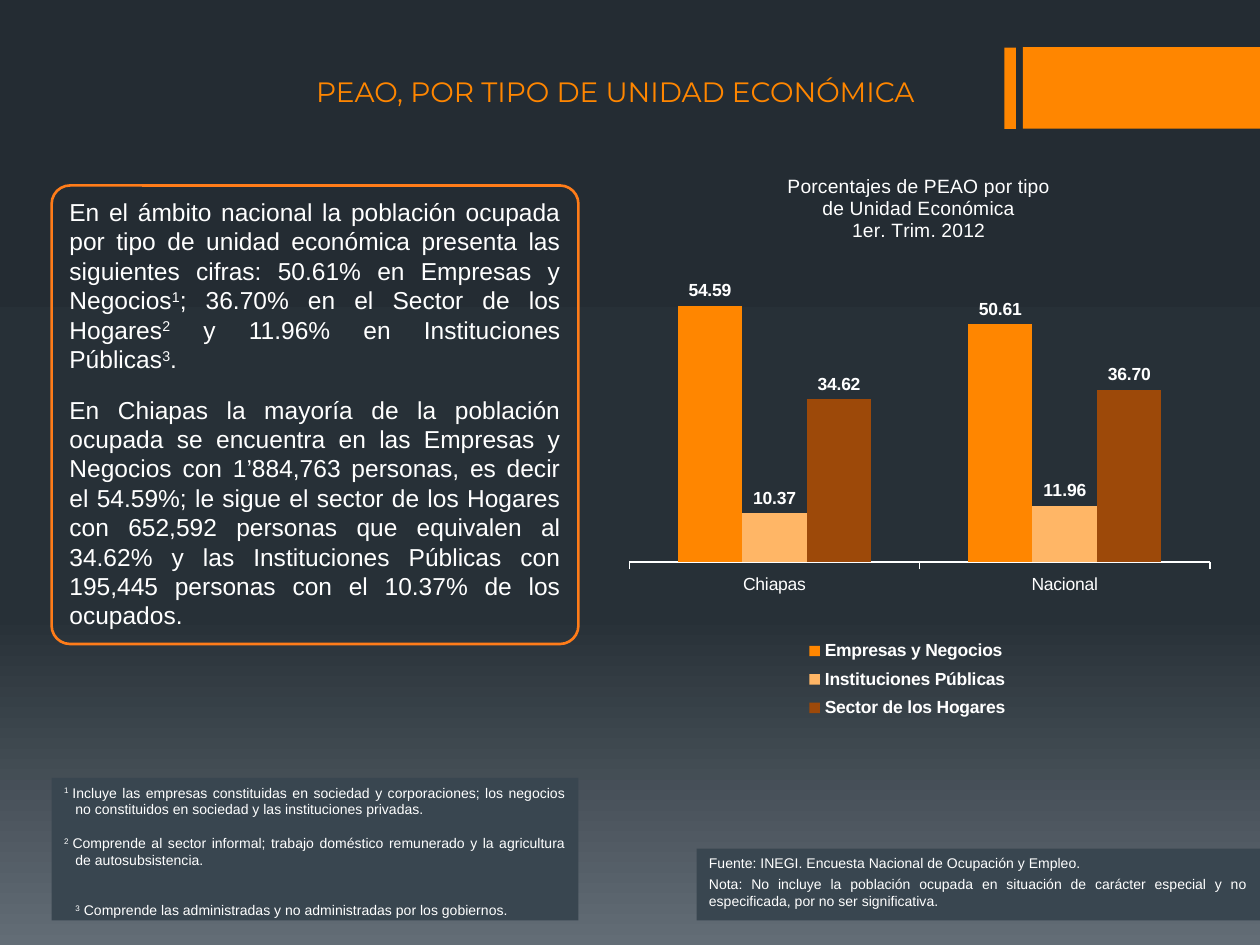
from copy import deepcopy
from dataclasses import dataclass

from lxml import etree
from pptx import Presentation
from pptx import util as u
from pptx.chart import data as chart_data
from pptx.dml import color
from pptx.enum import chart as charts
from pptx.enum import shapes, text
from pptx.oxml import ns

Pt = u.Pt
ORANGE = color.RGBColor(0xFF, 0x86, 0x00)
BORDER = color.RGBColor(0xFF, 0x7C, 0x19)
LIGHT_ORANGE = color.RGBColor(0xFF, 0xB6, 0x66)
BROWN = color.RGBColor(0x9D, 0x49, 0x09)
WHITE = color.RGBColor(0xFF, 0xFF, 0xFF)
SLATE = color.RGBColor(0x39, 0x46, 0x50)
BACKGROUND = (
    (0, color.RGBColor(0x24, 0x2C, 0x33)),
    (0.65, color.RGBColor(0x27, 0x30, 0x37)),
    (1, color.RGBColor(0x63, 0x6D, 0x76)),
)
LINE_FACTOR = 1.2


@dataclass
class Box:
    left: float
    top: float
    width: float
    height: float

    def lengths(self) -> tuple:
        return Pt(self.left), Pt(self.top), Pt(self.width), Pt(self.height)


@dataclass
class Run:
    words: str
    raised: bool = False


@dataclass
class Paragraph:
    runs: list[Run]
    before: float = 0
    after: float = 0
    margin: float = 0
    indent: float = 0


@dataclass
class Series:
    name: str
    values: tuple[float, ...]
    fill: color.RGBColor


BARS = [Box(574, 27.25, 6.5, 46.5), Box(584.5, 27, 135.5, 46.5)]
BODY = [
    Paragraph([
        Run("En el ámbito nacional la población ocupada por tipo de unidad económica presenta las "
            "siguientes cifras: 50.61% en Empresas y Negocios"),
        Run("1", True),
        Run("; 36.70% en el Sector de los Hogares"),
        Run("2", True),
        Run(" y 11.96% en Instituciones Públicas"),
        Run("3", True),
        Run("."),
    ], after=6),
    Paragraph([
        Run("En Chiapas la mayoría de la población ocupada se encuentra en las Empresas y Negocios "
            "con 1’884,763 personas, es decir el 54.59%; le sigue el sector de los Hogares con "
            "652,592 personas que equivalen al 34.62% y las Instituciones Públicas con 195,445 "
            "personas con el 10.37% de los ocupados."),
    ], before=6, after=6),
]
SOURCE = [
    Paragraph([Run("Fuente: INEGI. Encuesta Nacional de Ocupación y Empleo.")]),
    Paragraph([Run("Nota: No incluye la población ocupada en situación de carácter especial y no "
                   "especificada, por no ser significativa.")], before=2),
]
FOOTNOTES = [
    Paragraph([Run("1 ", True),
               Run("Incluye las empresas constituidas en sociedad y corporaciones; los negocios no "
                   "constituidos en sociedad y las instituciones privadas.")],
              margin=6.5, indent=-6.5),
    Paragraph([Run("2 ", True),
               Run("Comprende al sector informal; trabajo doméstico remunerado y la agricultura de "
                   "autosubsistencia.")],
              before=9.6, margin=6.5, indent=-6.5),
    Paragraph([Run("3", True),
               Run(" Comprende las administradas y no administradas por los gobiernos.")],
              before=19.2, margin=6.5),
]
CATEGORIES = ("Chiapas", "Nacional")
SERIES = [
    Series("Empresas y Negocios", (54.59, 50.61), ORANGE),
    Series("Instituciones Públicas", (10.37, 11.96), LIGHT_ORANGE),
    Series("Sector de los Hogares", (34.62, 36.70), BROWN),
]
CHART_TITLE = ("Porcentajes de PEAO por tipo", "de Unidad Económica", "1er. Trim. 2012")


def style_font(font, size: float, fill: color.RGBColor = WHITE, name: str = "Arial",
               bold: bool = False) -> None:
    font.size, font.name, font.bold = Pt(size), name, bold
    font.color.rgb = fill


def paint_background(slide) -> None:
    fill = slide.background.fill
    fill.gradient()
    fill.gradient_angle = 270
    stop_list = slide.element.xpath(".//a:gsLst")[0]
    stop_list.append(deepcopy(stop_list[-1]))
    for stop, (position, rgb) in zip(fill.gradient_stops, BACKGROUND):
        stop.position = position
        stop.color.rgb = rgb


def add_panel(slide, box: Box, fill=None, border=None, kind=shapes.MSO_SHAPE.RECTANGLE):
    shape = slide.shapes.add_shape(kind, *box.lengths())
    shape.shadow.inherit = False
    if fill is None:
        shape.fill.background()
    else:
        shape.fill.solid()
        shape.fill.fore_color.rgb = fill
    if border is None:
        shape.line.fill.background()
    else:
        shape.line.color.rgb = border
        shape.line.width = Pt(1.5)
    return shape


def write_paragraphs(shape, entries: list[Paragraph], size: float) -> None:
    frame = shape.text_frame
    frame.word_wrap = True
    frame.vertical_anchor = text.MSO_ANCHOR.TOP
    for index, entry in enumerate(entries):
        paragraph = frame.paragraphs[0] if index == 0 else frame.add_paragraph()
        paragraph.alignment = text.PP_ALIGN.JUSTIFY
        paragraph.line_spacing = Pt(size * LINE_FACTOR)
        paragraph.space_before = Pt(entry.before)
        paragraph.space_after = Pt(entry.after)
        properties = paragraph._p.get_or_add_pPr()
        properties.set("marL", str(int(Pt(entry.margin))))
        properties.set("indent", str(int(Pt(entry.indent))))
        for part in entry.runs:
            run = paragraph.add_run()
            run.text = part.words
            style_font(run.font, size)
            if part.raised:
                run.font._element.set("baseline", "30000")


def place(parent, follows: str, inner: bool = False, **values: float) -> None:
    for old in parent.findall(ns.qn("c:layout")):
        parent.remove(old)
    layout = etree.Element(ns.qn("c:layout"))
    manual = etree.SubElement(layout, ns.qn("c:manualLayout"))
    settings = {"layoutTarget": "inner"} if inner else {}
    settings |= {"xMode": "edge", "yMode": "edge", **values}
    for tag, value in settings.items():
        etree.SubElement(manual, ns.qn(f"c:{tag}")).set("val", str(value))
    anchor = parent.find(ns.qn(follows)) if follows else None
    parent.insert(0 if anchor is None else parent.index(anchor) + 1, layout)


def add_column_chart(slide, box: Box) -> None:
    data = chart_data.CategoryChartData(number_format="0.00")
    data.categories = CATEGORIES
    for entry in SERIES:
        data.add_series(entry.name, entry.values)
    chart = slide.shapes.add_chart(charts.XL_CHART_TYPE.COLUMN_CLUSTERED, *box.lengths(), data).chart
    style_font(chart.font, 10)

    frame = chart.chart_title.text_frame
    for index, line in enumerate(CHART_TITLE):
        paragraph = frame.paragraphs[0] if index == 0 else frame.add_paragraph()
        run = paragraph.add_run()
        run.text = line
        style_font(run.font, 11)
    chart.chart_title.include_in_layout = False
    place(chart.chart_title._element, "c:tx", x=0.28, y=0.04)

    plot = chart.plots[0]
    plot.gap_width, plot.overlap, plot.vary_by_categories = 150, 0, False
    for series, entry in zip(plot.series, SERIES):
        series.format.fill.solid()
        series.format.fill.fore_color.rgb = entry.fill
        labels = series.data_labels
        labels.show_value = True
        labels.number_format, labels.number_format_is_linked = "0.00", False
        labels.position = charts.XL_LABEL_POSITION.OUTSIDE_END
        style_font(labels.font, 10, bold=True)
    place(chart._chartSpace.chart.plotArea, "", True, x=0.03, y=0.23, w=0.94, h=0.48)

    chart.category_axis.major_tick_mark = charts.XL_TICK_MARK.OUTSIDE
    chart.category_axis.format.line.color.rgb = WHITE
    axis = chart.value_axis
    axis.visible, axis.has_major_gridlines = False, False
    axis.minimum_scale, axis.maximum_scale = 0, 60

    chart.has_legend = True
    chart.legend.position = charts.XL_LEGEND_POSITION.BOTTOM
    chart.legend.include_in_layout = False
    style_font(chart.legend.font, 10, bold=True)
    place(chart.legend._element, "c:legendPos", x=0.31, y=0.83, w=0.34, h=0.16)


def add_heading(slide, words: str, box: Box) -> None:
    frame = slide.shapes.add_textbox(*box.lengths()).text_frame
    frame.word_wrap = True
    paragraph = frame.paragraphs[0]
    paragraph.alignment = text.PP_ALIGN.CENTER
    run = paragraph.add_run()
    run.text = words
    style_font(run.font, 16, ORANGE, "Montserrat")


def main() -> None:
    presentation = Presentation()
    presentation.slide_width, presentation.slide_height = Pt(720), Pt(540)
    slide = presentation.slides.add_slide(presentation.slide_layouts[6])
    paint_background(slide)
    for bar in BARS:
        add_panel(slide, bar, ORANGE)
    body = add_panel(slide, Box(29.5, 106, 301, 262), border=BORDER,
                     kind=shapes.MSO_SHAPE.ROUNDED_RECTANGLE)
    body.adjustments[0] = 0.04
    write_paragraphs(body, BODY, 14)
    write_paragraphs(add_panel(slide, Box(398, 485, 322, 41), SLATE), SOURCE, 8)
    write_paragraphs(add_panel(slide, Box(29.5, 444.5, 301, 81.5), SLATE), FOOTNOTES, 8)
    add_column_chart(slide, Box(349, 83, 353, 335.5))
    add_heading(slide, "PEAO, POR TIPO DE UNIDAD ECONÓMICA", Box(132.5, 39, 438.5, 26.5))
    presentation.save("out.pptx")


if __name__ == "__main__":
    main()
